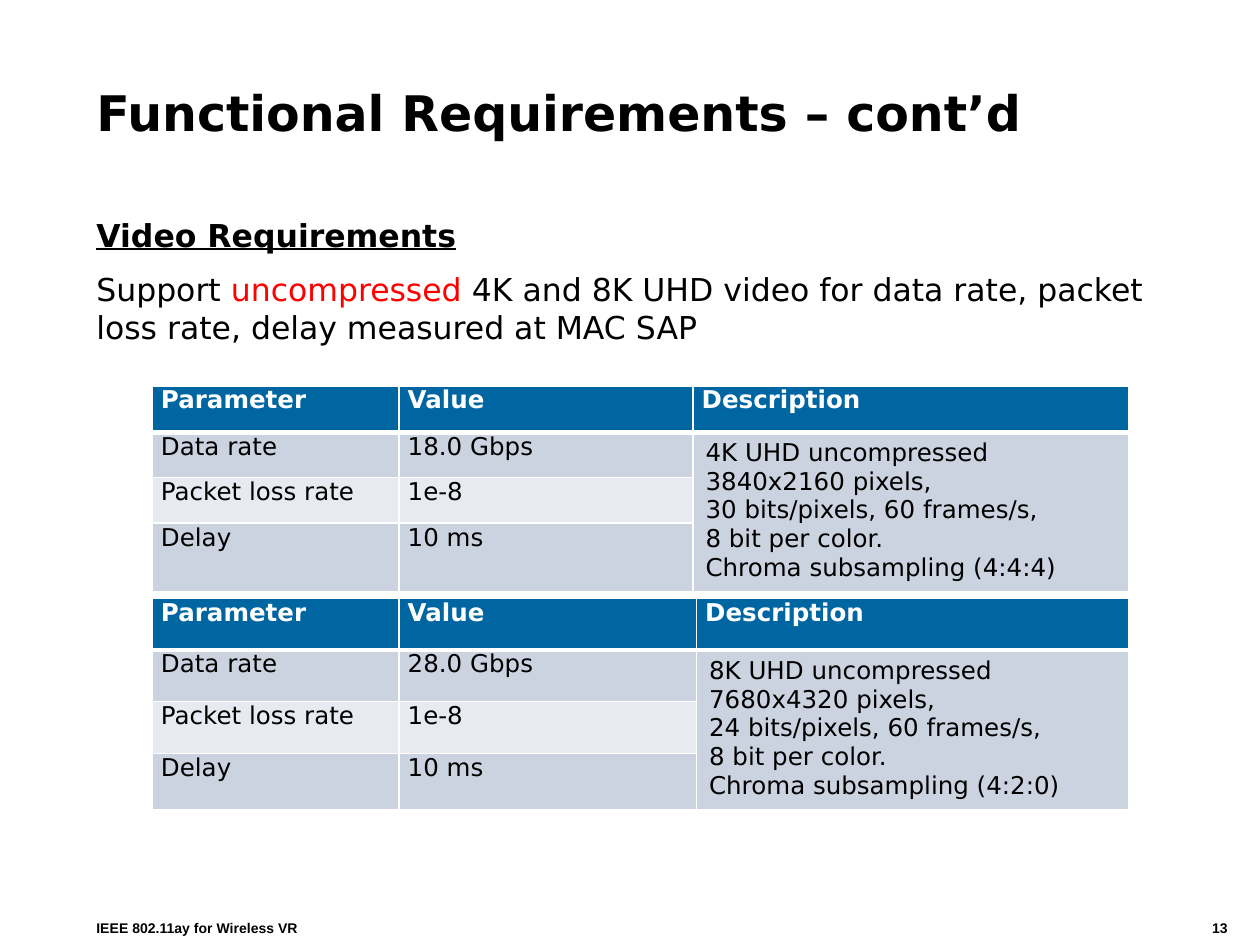
from lxml import etree
from pptx import Presentation
from pptx.dml.color import RGBColor
from pptx.enum import text
from pptx.oxml.ns import qn
from pptx.util import Pt

BLACK = RGBColor(0, 0, 0)
WHITE = RGBColor(255, 255, 255)
RED = RGBColor(255, 0, 0)
BLUE = RGBColor(0x00, 0x66, 0xA1)
DARK = RGBColor(0xCC, 0xD3, 0xE0)
LIGHT = RGBColor(0xE7, 0xEA, 0xF0)
SANS = "DejaVu Sans"


def add_run(para, words, size, color=BLACK, bold=False, face=SANS):
    run = para.add_run()
    run.text = words
    font = run.font
    font.size, font.bold, font.name = Pt(size), bold, face
    font.color.rgb = color
    return run


def add_box(left, top, width, height):
    box = slide.shapes.add_textbox(Pt(left), Pt(top), Pt(width), Pt(height))
    box.text_frame.word_wrap = True
    return box.text_frame


deck = Presentation()
deck.slide_width, deck.slide_height = Pt(720), Pt(540)
slide = deck.slides.add_slide(deck.slide_layouts[6])

title = add_box(48, 24, 636, 60)
title.vertical_anchor = text.MSO_ANCHOR.BOTTOM
add_run(title.paragraphs[0], "Functional Requirements – cont’d", 28, bold=True)

body = add_box(48, 120, 636, 87)
head = add_run(body.paragraphs[0], "Video Requirements", 18, bold=True)
head.font.underline = True
para = body.add_paragraph()
para.space_before = Pt(9)
add_run(para, "Support ", 18)
add_run(para, "uncompressed", 18, RED)
add_run(para, " 4K and 8K UHD video for data rate, packet loss rate, "
        "delay measured at MAC SAP", 18)

tables = [
    (220.5, [141, 168, 249], [26.5, 26, 26, 29.5], "18.0 Gbps",
     ["4K UHD uncompressed", "3840x2160 pixels,", "30 bits/pixels, 60 frames/s,",
      "8 bit per color.", "Chroma subsampling (4:4:4)"]),
    (342, [141, 170, 247], [29.5] * 4, "28.0 Gbps",
     ["8K UHD uncompressed", "7680x4320 pixels,", "24 bits/pixels, 60 frames/s,",
      "8 bit per color.", "Chroma subsampling (4:2:0)"]),
]
for top, widths, heights, rate, notes in tables:
    grid = slide.shapes.add_table(4, 3, Pt(87), Pt(top), Pt(sum(widths)),
                                  Pt(sum(heights))).table
    for col, width in zip(grid.columns, widths):
        col.width = Pt(width)
    for row, height in zip(grid.rows, heights):
        row.height = Pt(height)
    grid.cell(1, 2).merge(grid.cell(3, 2))
    rows = [
        [["Parameter"], ["Value"], ["Description"]],
        [["Data rate"], [rate], notes],
        [["Packet loss rate"], ["1e-8"], []],
        [["Delay"], ["10 ms"], []],
    ]
    for r, row in enumerate(rows):
        for c, lines in enumerate(row):
            cell = grid.cell(r, c)
            if r == 0 or c < 2:
                cell.margin_left = cell.margin_right = Pt(5)
                cell.margin_top = cell.margin_bottom = Pt(0)
            props = cell._tc.get_or_add_tcPr()
            for side in "LRTB":
                thick = (r, side) in [(0, "B"), (1, "T")]
                edge = etree.SubElement(props, qn("a:ln" + side),
                                        w=str(Pt(3 if thick else 1)))
                fill = etree.SubElement(edge, qn("a:solidFill"))
                etree.SubElement(fill, qn("a:srgbClr"), val=str(WHITE))
            cell.fill.solid()
            cell.fill.fore_color.rgb = (BLUE, DARK, DARK if c == 2 else LIGHT, DARK)[r]
            frame = cell.text_frame
            for i, line in enumerate(lines):
                para = frame.add_paragraph() if i else frame.paragraphs[0]
                add_run(para, line, 14, BLACK if r else WHITE, r == 0)

for left, width, words in [(48, 378, "IEEE 802.11ay for Wireless VR"),
                           (685.5, 34.5, "13")]:
    foot = add_box(left, 522, width, 18)
    add_run(foot.paragraphs[0], words, 8, bold=True, face="Arial")

deck.save("out.pptx")
